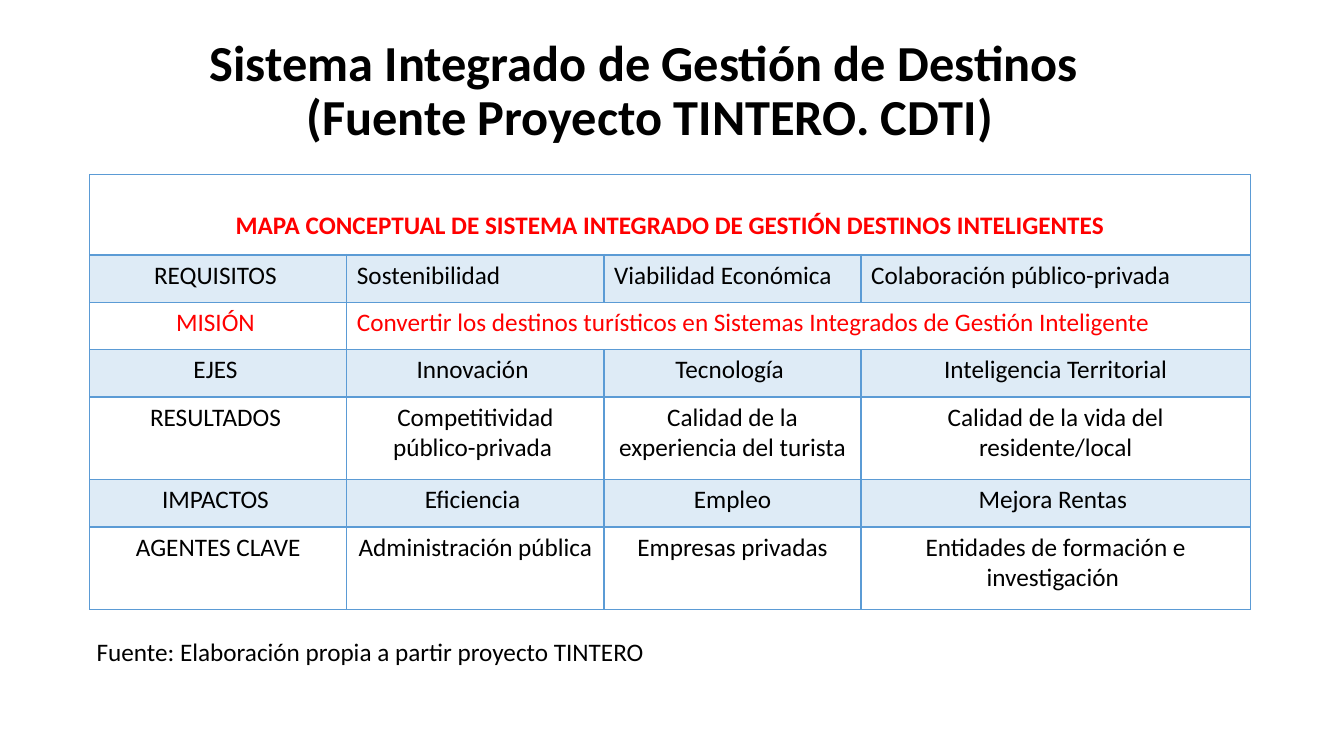
from dataclasses import dataclass

from lxml.etree import SubElement
from pptx import Presentation
from pptx.dml.color import RGBColor
from pptx.enum.text import MSO_ANCHOR, MSO_AUTO_SIZE, PP_ALIGN
from pptx.oxml.ns import qn
from pptx.util import Inches, Pt


@dataclass(frozen=True)
class Theme:
    font: str = "Calibri"
    text: str = "000000"
    emphasis: str = "FF0000"
    accent: str = "5B9BD5"
    band_opacity: int = 20
    title_size: int = 36
    body_size: int = 18
    thin: int = 1
    thick: int = 2


THEME = Theme()

TITLE_LINES = ["Sistema Integrado de Gestión de Destinos ",
               "(Fuente Proyecto TINTERO. CDTI)"]
MAP_ROWS = [
    ["MAPA CONCEPTUAL DE SISTEMA INTEGRADO DE GESTIÓN DESTINOS INTELIGENTES"],
    ["REQUISITOS ", "Sostenibilidad", "Viabilidad Económica",
     "Colaboración público-privada"],
    ["MISIÓN ",
     "Convertir los destinos turísticos en Sistemas Integrados de Gestión Inteligente"],
    ["EJES ", "Innovación ", "Tecnología ", "Inteligencia Territorial"],
    ["RESULTADOS ", "Competitividad público-privada ",
     "Calidad de la experiencia del turista", "Calidad de la vida del residente/local"],
    ["IMPACTOS ", "Eficiencia ", "Empleo", "Mejora Rentas "],
    ["AGENTES CLAVE", "Administración pública", "Empresas privadas",
     "Entidades de formación e investigación "],
]
COLUMN_WIDTHS = [2.55, 2.55, 2.55, 3.86]
ROW_HEIGHTS = [0.8, 0.47, 0.47, 0.47, 0.82, 0.47, 0.82]
HEADING_ROW, REQUIREMENTS_ROW, MISSION_ROW = 0, 1, 2
BANDED_ROWS = (1, 3, 5)


def add_run(paragraph, text, size=THEME.body_size, color=THEME.text, bold=False):
    run = paragraph.add_run()
    run.text = text
    run.font.name = THEME.font
    run.font.size = Pt(size)
    run.font.bold = bold
    run.font.color.rgb = RGBColor.from_string(color)


def add_title(slide):
    title = slide.shapes.title
    title.left, title.top = Inches(0.14), Inches(0.19)
    title.width, title.height = Inches(12.61), Inches(1.45)
    frame = title.text_frame
    frame.auto_size = MSO_AUTO_SIZE.NONE
    frame.vertical_anchor = MSO_ANCHOR.MIDDLE
    paragraph = frame.paragraphs[0]
    paragraph.alignment = PP_ALIGN.CENTER
    paragraph.line_spacing = 0.9
    for index, line in enumerate(TITLE_LINES):
        if index:
            paragraph.add_line_break()
        add_run(paragraph, line, THEME.title_size, bold=True)


def set_borders(cell, row):
    widths = dict.fromkeys(("lnL", "lnR", "lnT", "lnB"), THEME.thin)
    if row == HEADING_ROW:
        widths["lnB"] = THEME.thick
    elif row == HEADING_ROW + 1:
        widths["lnT"] = THEME.thick
    properties = cell._tc.get_or_add_tcPr()
    for side, width in widths.items():
        line = SubElement(properties, qn(f"a:{side}"), w=str(Pt(width)))
        fill = SubElement(line, qn("a:solidFill"))
        SubElement(fill, qn("a:srgbClr"), val=THEME.accent)


def set_fill(cell, banded):
    if not banded:
        cell.fill.background()
        return
    cell.fill.solid()
    cell.fill.fore_color.rgb = RGBColor.from_string(THEME.accent)
    color = cell._tc.tcPr.find(f"{qn('a:solidFill')}/{qn('a:srgbClr')}")
    SubElement(color, qn("a:alpha"), val=str(THEME.band_opacity * 1000))


def fill_cell(cell, row, column, text):
    paragraph = cell.text_frame.paragraphs[0]
    left_aligned = column > 0 and row in (REQUIREMENTS_ROW, MISSION_ROW)
    paragraph.alignment = PP_ALIGN.LEFT if left_aligned else PP_ALIGN.CENTER
    emphasized = row in (HEADING_ROW, MISSION_ROW)
    add_run(paragraph, text, color=THEME.emphasis if emphasized else THEME.text,
            bold=row == HEADING_ROW)


def add_concept_map(slide):
    table = slide.shapes.add_table(
        len(ROW_HEIGHTS), len(COLUMN_WIDTHS), Inches(0.89), Inches(1.73),
        Inches(sum(COLUMN_WIDTHS)), Inches(sum(ROW_HEIGHTS))).table
    table.first_row = table.horz_banding = False
    for column, width in zip(table.columns, COLUMN_WIDTHS):
        column.width = Inches(width)
    for row, height in zip(table.rows, ROW_HEIGHTS):
        row.height = Inches(height)

    for row, texts in enumerate(MAP_ROWS):
        for column in range(len(COLUMN_WIDTHS)):
            cell = table.cell(row, column)
            set_borders(cell, row)
            set_fill(cell, row in BANDED_ROWS)
            if column < len(texts):
                fill_cell(cell, row, column, texts[column])
        # The last text of a short row spans the remaining columns
        if len(texts) < len(COLUMN_WIDTHS):
            table.cell(row, len(texts) - 1).merge(
                table.cell(row, len(COLUMN_WIDTHS) - 1))
    table.cell(HEADING_ROW, 0).margin_top = Inches(0.36)


def add_source_note(slide):
    box = slide.shapes.add_textbox(Inches(0.86), Inches(6.26), Inches(5.69), Inches(0.4))
    frame = box.text_frame
    frame.word_wrap = False
    frame.auto_size = MSO_AUTO_SIZE.SHAPE_TO_FIT_TEXT
    add_run(frame.paragraphs[0], "Fuente: Elaboración propia a partir proyecto TINTERO")


def main():
    presentation = Presentation()
    presentation.slide_width = Inches(13.33)
    presentation.slide_height = Inches(7.5)
    slide = presentation.slides.add_slide(presentation.slide_layouts[5])
    add_title(slide)
    add_concept_map(slide)
    add_source_note(slide)
    presentation.save("out.pptx")


if __name__ == "__main__":
    main()
